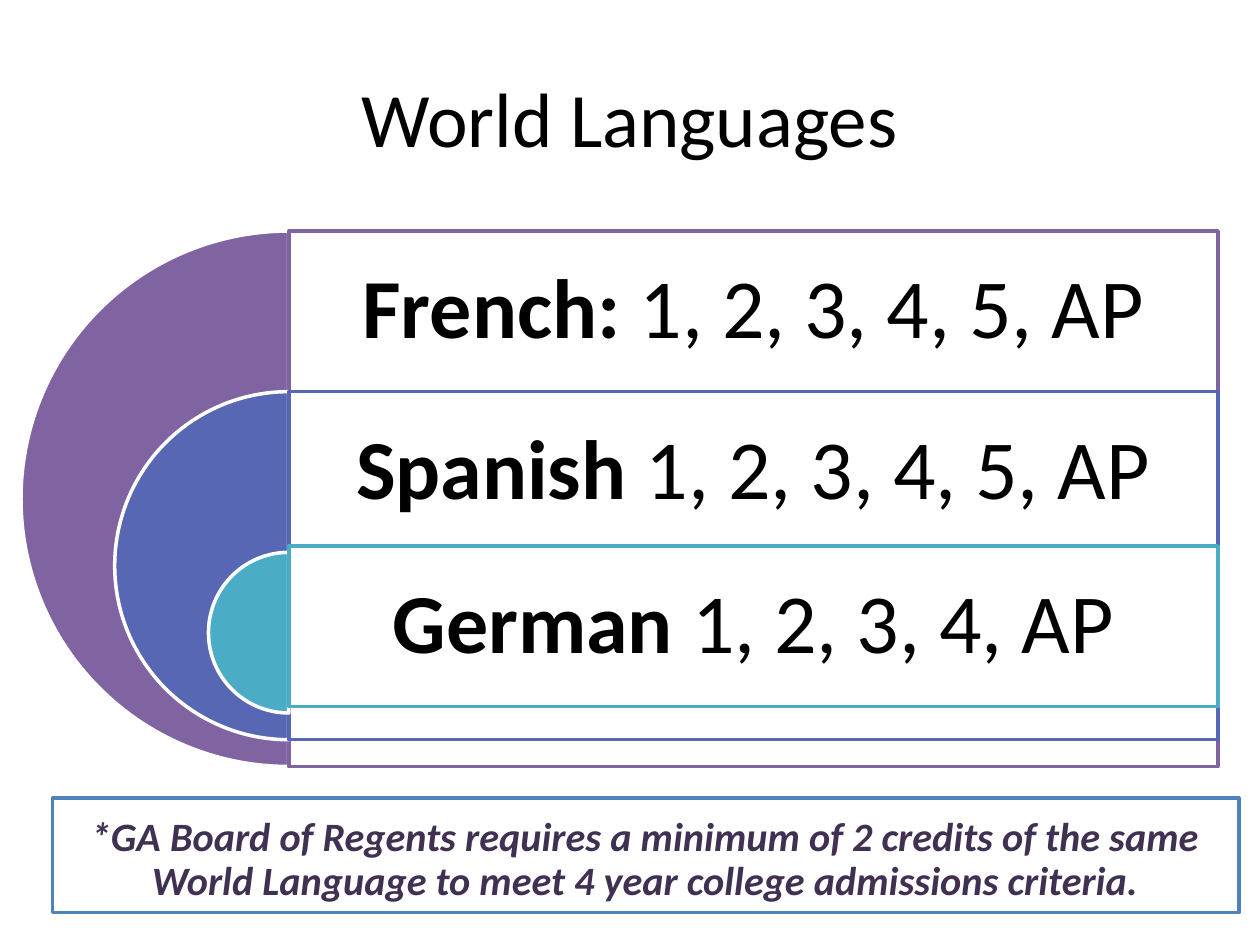
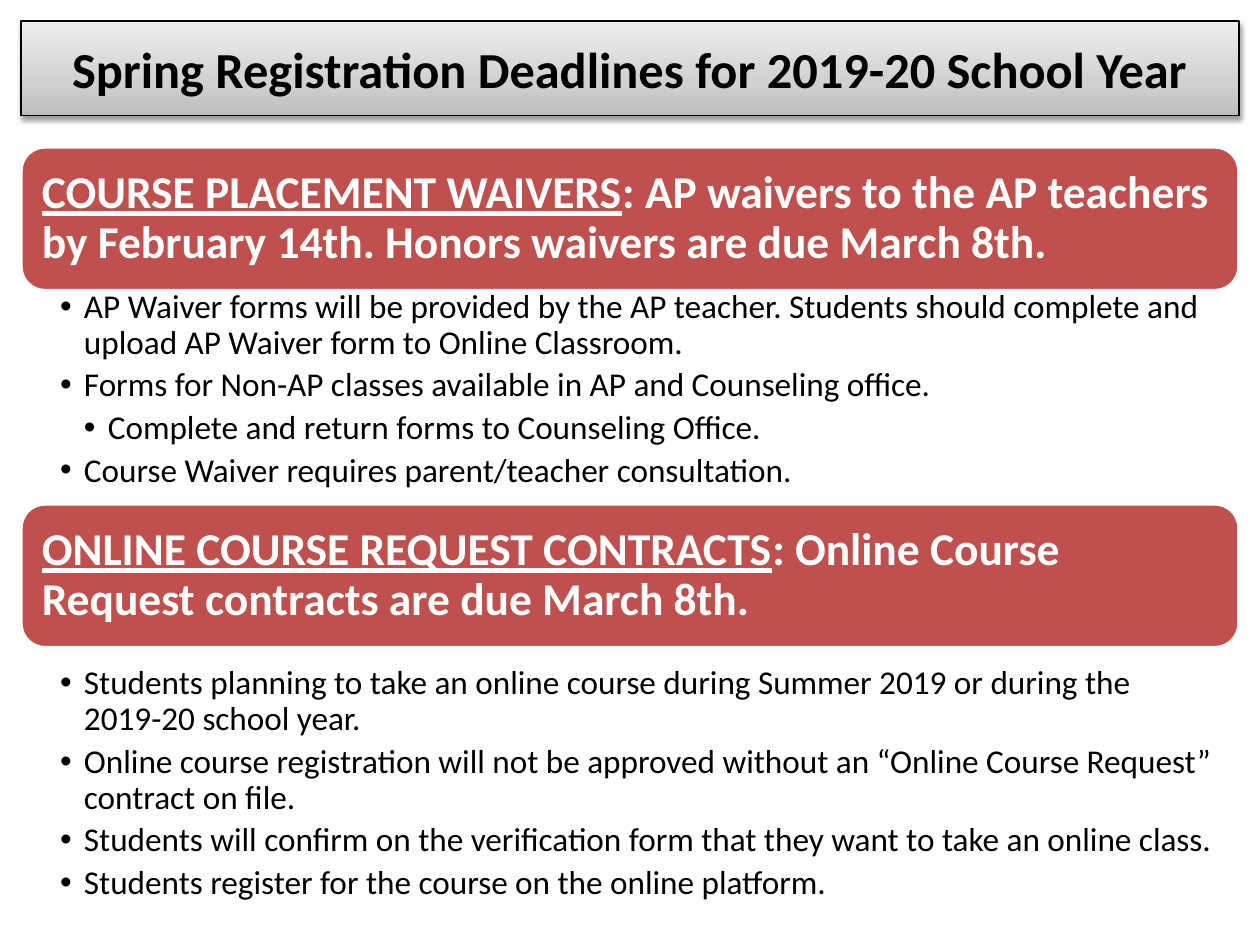
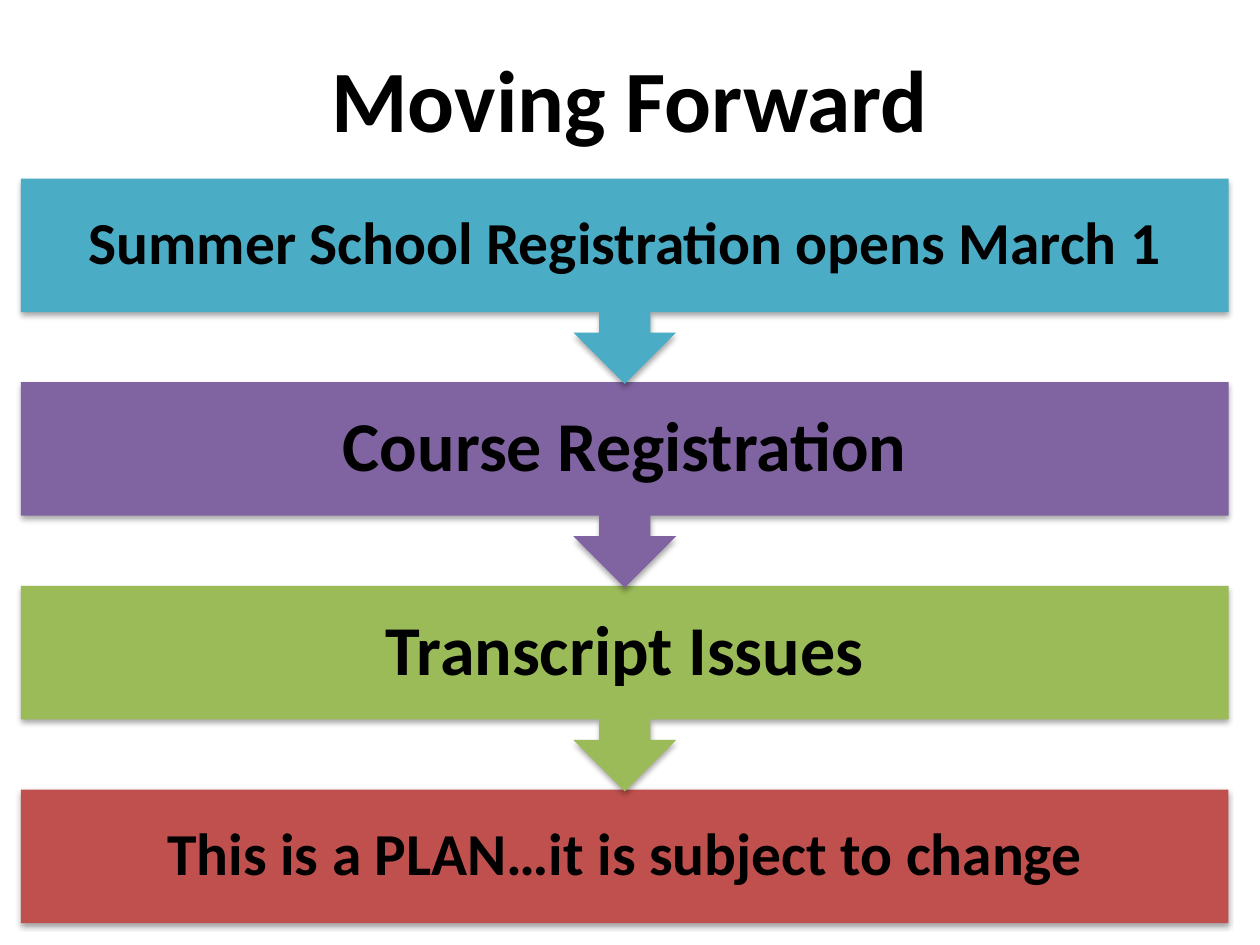
import collections

import lxml.etree
import pptx
import pptx.dml.color
import pptx.enum.shapes
import pptx.enum.text
import pptx.oxml.ns
import pptx.util

SHAPES = pptx.enum.shapes.MSO_SHAPE
ALIGN = pptx.enum.text.PP_ALIGN
ANCHOR = pptx.enum.text.MSO_ANCHOR

# Shared look: a grid of 60 columns by 45 rows, one font, one palette
COLUMNS, ROWS = 60, 45
CELL = pptx.util.Inches(10) // COLUMNS
FONT = "Calibri"
BLACK, WHITE = "000000", "FFFFFF"
PURPLE, INDIGO, TEAL = "8064A2", "5767B4", "4BACC6"
BLUE, GREEN, RED, DARK_PURPLE = "4F81BD", "9BBB59", "C0504D", "403152"
TITLE_GRADIENT = [(0, "BDBDBD"), (35, "D1D1D1"), (100, "EEEEEE")]

# Position and size in columns and rows
Box = collections.namedtuple("Box", "left top width height")


def color(hex_text):
    return pptx.dml.color.RGBColor.from_string(hex_text)


def add_xml(parent, tag, **attributes):
    values = {name: str(value) for name, value in attributes.items()}
    return lxml.etree.SubElement(parent, pptx.oxml.ns.qn(tag), values)


def to_lengths(box):
    return [round(value * CELL) for value in box]


# Text
def set_bullet(paragraph, level):
    step = pptx.util.Inches(0.19)
    paragraph.level = level
    properties = paragraph._p.get_or_add_pPr()
    properties.set("marL", str(step * level))
    properties.set("indent", str(-step))
    add_xml(properties, "a:buFont", typeface="Arial")
    add_xml(properties, "a:buChar", char="•")


def write_text(shape, paragraphs, size=19, ink=BLACK, bold=False, italic=False,
               align=ALIGN.CENTER, anchor=ANCHOR.MIDDLE, insets=(0.1, 0.05, 0.1, 0.05),
               line_spacing=0.9, space_after=0.35, levels=None):
    """Each paragraph is a list of (text, font overrides) runs."""
    frame = shape.text_frame
    frame.word_wrap = True
    frame.vertical_anchor = anchor
    (frame.margin_left, frame.margin_top,
     frame.margin_right, frame.margin_bottom) = map(pptx.util.Inches, insets)
    for index, runs in enumerate(paragraphs):
        paragraph = frame.add_paragraph() if index else frame.paragraphs[0]
        paragraph.alignment = align
        paragraph.line_spacing = line_spacing
        paragraph.space_after = pptx.util.Pt(size * space_after)
        if levels:
            set_bullet(paragraph, levels[index])
        for text, overrides in runs:
            run = paragraph.add_run()
            run.text = text
            font = run.font
            font.name, font.size = FONT, pptx.util.Pt(size)
            font.bold, font.italic = bold, italic
            font.color.rgb = color(ink)
            for name, value in overrides.items():
                setattr(font, name, value)


def add_text(slide, box, paragraphs, **text_format):
    write_text(slide.shapes.add_textbox(*to_lengths(box)), paragraphs, **text_format)


def add_title(slide, box, text, **text_format):
    add_text(slide, box, [[(text, {})]], line_spacing=1.0, space_after=0, **text_format)


# Shapes
def add_shadow(shape, opacity, distance):
    effects = shape._element.spPr.find(pptx.oxml.ns.qn("a:effectLst"))
    shadow = add_xml(effects, "a:outerShdw", blurRad=pptx.util.Pt(3.1),
                     dist=pptx.util.Pt(distance), dir=90 * 60000, rotWithShape=0)
    shade = add_xml(shadow, "a:srgbClr", val=BLACK)
    add_xml(shade, "a:alpha", val=opacity * 1000)


def add_shape(slide, kind, box, fill, line=None, line_width=2, opacity=100):
    shape = slide.shapes.add_shape(kind, *to_lengths(box))
    shape.shadow.inherit = False
    shape.fill.solid()
    shape.fill.fore_color.rgb = color(fill)
    if opacity < 100:
        shade = shape.fill._xPr.find(".//" + pptx.oxml.ns.qn("a:srgbClr"))
        add_xml(shade, "a:alpha", val=opacity * 1000)
    if line:
        shape.line.color.rgb = color(line)
        shape.line.width = pptx.util.Pt(line_width)
    else:
        shape.line.fill.background()
    return shape


def set_gradient(shape, stops):
    shape.fill.gradient()
    shape.fill.gradient_angle = 90
    stop_list = shape._element.spPr.find(".//" + pptx.oxml.ns.qn("a:gsLst"))
    for stop in list(stop_list):
        stop_list.remove(stop)
    for position, shade in stops:
        stop = add_xml(stop_list, "a:gs", pos=position * 1000)
        add_xml(stop, "a:srgbClr", val=shade)


# Slide 1: nested half circles, each with a panel
def add_language_target(slide, box, languages):
    center = box.left + box.height / 2
    panel_width = box.left + box.width - center
    row_height = 0.3 * box.height
    for index, (name, courses, shade) in enumerate(languages):
        diameter = box.height * (1 - 0.35 * index)
        top = box.top + row_height * index
        half = add_shape(slide, SHAPES.PIE,
                         Box(center - diameter / 2, top, diameter, diameter), shade, WHITE)
        half.adjustments[0], half.adjustments[1] = 54, 162
        # The innermost panel sits slightly higher
        panel_top = top - 0.3 if index == len(languages) - 1 else top
        panel = Box(center, panel_top, panel_width, diameter)
        add_shape(slide, SHAPES.RECTANGLE, panel, WHITE, shade, opacity=90)
        add_text(slide, panel._replace(height=row_height),
                 [[(name, {"bold": True}), (courses, {})]], size=48, insets=[0.2] * 4)


def add_requirement_note(slide, box, text):
    add_shape(slide, SHAPES.RECTANGLE, box, WHITE, BLUE, opacity=90)
    add_text(slide, box._replace(top=box.top + 0.5, height=box.height - 0.5), [[(text, {})]],
             size=23, ink=DARK_PURPLE, bold=True, italic=True, insets=[0.1] * 4)


def build_languages(slide):
    add_title(slide, Box(3, 1.8, 54, 7.5), "World Languages", size=44)
    add_language_target(slide, Box(1, 11, 57, 25.5), [
        ("French:", " 1, 2, 3, 4, 5, AP", PURPLE),
        ("Spanish", " 1, 2, 3, 4, 5, AP", INDIGO),
        ("German", " 1, 2, 3, 4, AP", TEAL)])
    add_requirement_note(
        slide, Box(2.5, 38, 56.5, 5.45),
        "*GA Board of Regents requires a minimum of 2 credits of the same World Language "
        "to meet 4 year college admissions criteria.")


# Slide 2: headings with bullet lists
def add_title_band(slide, box, text):
    band = add_shape(slide, SHAPES.ROUND_2_SAME_RECTANGLE, box, WHITE, BLACK, 0.75)
    band.adjustments[0] = 0
    set_gradient(band, TITLE_GRADIENT)
    add_shadow(band, 38, 1.6)
    write_text(band, [[(text, {})]], size=28.8, bold=True, line_spacing=1.0, space_after=0)


def add_deadline(slide, box, body_top, subject, rule, bullets):
    heading = add_shape(slide, SHAPES.ROUNDED_RECTANGLE, box._replace(height=6.84), RED, WHITE)
    write_text(heading, [[(subject, {"underline": True}), (rule, {})]], size=26, ink=WHITE,
               bold=True, align=ALIGN.LEFT, insets=[0.11] * 4)
    body = Box(box.left, box.top + body_top, box.width, box.height - body_top)
    add_text(slide, body, [[(text, {})] for level, text in bullets],
             levels=[level for level, text in bullets], align=ALIGN.LEFT, anchor=ANCHOR.TOP,
             insets=(0.31, 0.03, 0.19, 0.03), space_after=0.2)


def build_deadlines(slide):
    add_title_band(slide, Box(1, 1, 58, 4.5),
                   "Spring Registration Deadlines for 2019-20 School Year")
    add_deadline(
        slide, Box(1, 7, 58, 16.9), 6.62, "COURSE PLACEMENT WAIVERS",
        ": AP waivers to the AP teachers by February 14th. Honors waivers are due March 8th.", [
            (1, "AP Waiver forms will be provided by the AP teacher. Students should complete "
                "and upload AP Waiver form to Online Classroom."),
            (1, "Forms for Non-AP classes available in AP and Counseling office."),
            (2, "Complete and return forms to Counseling Office."),
            (1, "Course Waiver requires parent/teacher consultation.")])
    add_deadline(
        slide, Box(1, 24, 58, 21), 7.55, "ONLINE COURSE REQUEST CONTRACTS",
        ": Online Course Request contracts are due March 8th.", [
            (1, "Students planning to take an online course during Summer 2019 or during the "
                "2019-20 school year."),
            (1, "Online course registration will not be approved without an “Online Course "
                "Request” contract on file."),
            (1, "Students will confirm on the verification form that they want to take an "
                "online class."),
            (1, "Students register for the course on the online platform.")])


# Slide 3: steps joined by arrows
def add_step_flow(slide, box, steps):
    step_height, pitch = 6.36, 9.7
    # From the last step up, so that each arrow lies over the next step
    for index, (text, size, inset, shade) in reversed(list(enumerate(steps))):
        panel = Box(box.left, box.top + index * pitch, box.width, step_height)
        if index == len(steps) - 1:
            step = add_shape(slide, SHAPES.RECTANGLE, panel, shade)
        else:
            step = add_shape(slide, SHAPES.UP_ARROW_CALLOUT, panel._replace(height=9.78), shade)
            step.rotation = 180
        add_shadow(step, 35, 1.8)
        add_text(slide, panel, [[(text, {})]], size=size, bold=True, insets=[inset] * 4)


def build_next_steps(slide):
    add_title(slide, Box(3, 1.8, 54, 5.7), "Moving Forward", size=50, bold=True)
    add_step_flow(slide, Box(1, 8.5, 57.5, 35.5), [
        ("Summer School Registration opens March 1", 34, 0.26, TEAL),
        ("Course Registration", 40, 0.31, PURPLE),
        ("Transcript Issues", 40, 0.31, GREEN),
        ("This is a PLAN…it is subject to change", 34, 0.26, RED)])


def main():
    presentation = pptx.Presentation()
    presentation.slide_width = COLUMNS * CELL
    presentation.slide_height = ROWS * CELL
    blank_layout = presentation.slide_layouts[6]
    for build in (build_languages, build_deadlines, build_next_steps):
        build(presentation.slides.add_slide(blank_layout))
    presentation.save("out.pptx")


if __name__ == "__main__":
    main()
